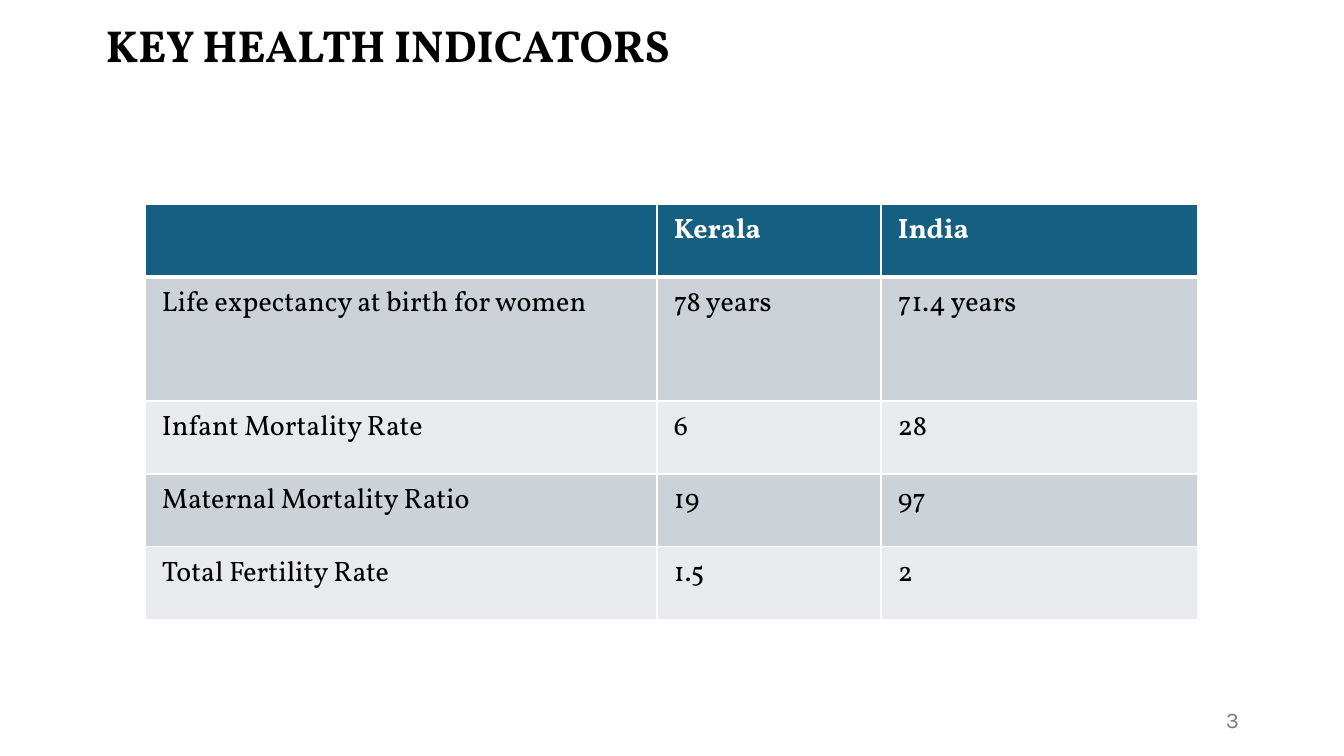
import lxml.etree
import pptx
import pptx.dml.color
import pptx.enum.text
import pptx.oxml.ns
import pptx.util

EMU_PER_PX = 12192000 / 1344
ANCHOR = pptx.enum.text.MSO_ANCHOR
ALIGN = pptx.enum.text.PP_ALIGN

INDICATORS = [
    ["", "Kerala", "India"],
    ["Life expectancy at birth for women", "78 years", "71.4 years"],
    ["Infant Mortality Rate", "6", "28"],
    ["Maternal Mortality Ratio", "19", "97"],
    ["Total Fertility Rate", "1.5", "2"],
]
COLUMN_WIDTHS = [512, 224, 317]
ROW_HEIGHTS = [73, 124, 73, 73, 73]


def px(length):
    return pptx.util.Emu(round(length * EMU_PER_PX))


def color(hex_string):
    return pptx.dml.color.RGBColor.from_string(hex_string)


def set_attributes(target, values):
    for name, value in values.items():
        setattr(target, name, value)


def margins(left, top, right, bottom):
    sides = ("left", "top", "right", "bottom")
    return {f"margin_{side}": px(value)
            for side, value in zip(sides, (left, top, right, bottom))}


class IndicatorSlide:
    heading_font = "Vollkorn"
    number_font = "Karla"
    black, white, grey = "000000", "FFFFFF", "797979"
    header_fill = "156082"
    band_fills = ("CCD2D8", "E8EAED")

    def __init__(self, presentation):
        self.slide = presentation.slides.add_slide(presentation.slide_layouts[6])

    def add_text(self, paragraph, text, font, size, hex_string, bold=False):
        run = paragraph.add_run()
        run.text = text
        set_attributes(run.font, {"name": font, "size": pptx.util.Pt(size), "bold": bold})
        run.font.color.rgb = color(hex_string)

    def text_box(self, box, frame_format, paragraph_format, text, **style):
        shape = self.slide.shapes.add_textbox(*map(px, box))
        set_attributes(shape.text_frame, {"word_wrap": True, **frame_format})
        paragraph = shape.text_frame.paragraphs[0]
        set_attributes(paragraph, {"line_spacing": 0.9, **paragraph_format})
        self.add_text(paragraph, text, **style)

    def title(self, text):
        frame_format = {"vertical_anchor": ANCHOR.TOP, **margins(13, 4, 13, 7)}
        self.text_box((93, 20, 1159, 166), frame_format, {"alignment": ALIGN.LEFT}, text,
                      font=self.heading_font, size=32, hex_string=self.black, bold=True)

    def page_number(self, text):
        frame_format = {"vertical_anchor": ANCHOR.MIDDLE, **margins(13, 7, 13, 7)}
        self.text_box((950, 701, 302, 40), frame_format, {"alignment": ALIGN.RIGHT}, text,
                      font=self.number_font, size=16, hex_string=self.grey)

    def cell_borders(self, cell, widths):
        """Add white borders; widths are points by side letter, in schema order L, R, T, B."""
        properties = cell._tc.get_or_add_tcPr()
        qualified = pptx.oxml.ns.qn
        for side, width in widths.items():
            line = lxml.etree.SubElement(properties, qualified(f"a:ln{side}"),
                                         w=str(pptx.util.Pt(width)))
            fill = lxml.etree.SubElement(line, qualified("a:solidFill"))
            lxml.etree.SubElement(fill, qualified("a:srgbClr"), val=self.white)

    def table(self, left, top, rows, column_widths, row_heights):
        size = (sum(column_widths), sum(row_heights))
        table = self.slide.shapes.add_table(
            len(rows), len(column_widths), px(left), px(top), *map(px, size)).table
        set_attributes(table, {"first_row": False, "horz_banding": False})
        for column, width in zip(table.columns, column_widths):
            column.width = px(width)
        for row, height in zip(table.rows, row_heights):
            row.height = px(height)
        for row_index, texts in enumerate(rows):
            header = row_index == 0
            fill = self.header_fill if header else self.band_fills[(row_index - 1) % 2]
            borders = {"L": 1, "R": 1, "T": 3 if row_index == 1 else 1, "B": 3 if header else 1}
            for column_index, text in enumerate(texts):
                cell = table.cell(row_index, column_index)
                set_attributes(cell, margins(17, 8, 17, 8))
                self.cell_borders(cell, borders)
                cell.fill.solid()
                cell.fill.fore_color.rgb = color(fill)
                if text:
                    self.add_text(cell.text_frame.paragraphs[0], text, self.heading_font, 20,
                                  self.white if header else self.black, bold=header)


def main():
    presentation = pptx.Presentation()
    set_attributes(presentation, {"slide_width": px(1344), "slide_height": px(756)})
    slide = IndicatorSlide(presentation)
    slide.title("KEY HEALTH INDICATORS")
    slide.page_number("3")
    slide.table(145, 204, INDICATORS, COLUMN_WIDTHS, ROW_HEIGHTS)
    presentation.save("out.pptx")


if __name__ == "__main__":
    main()
